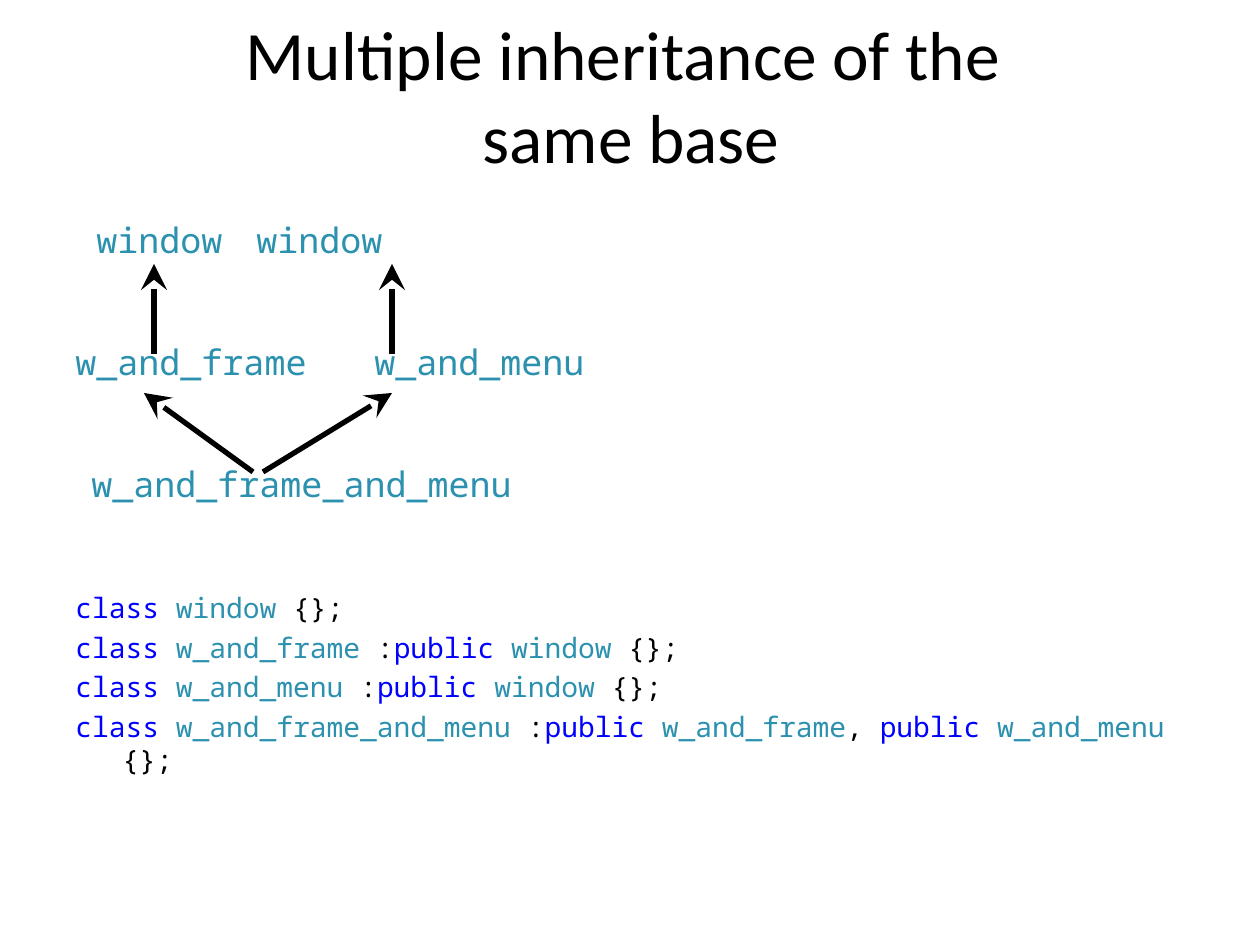
from lxml import etree
from pptx import Presentation
from pptx.dml.color import RGBColor
from pptx.enum.shapes import MSO_CONNECTOR
from pptx.enum.text import MSO_ANCHOR, MSO_AUTO_SIZE, PP_ALIGN
from pptx.oxml.ns import qn
from pptx.util import Emu, Pt

PX = 914400 // 126
BLACK = RGBColor(0, 0, 0)
KEYWORD = RGBColor(0, 0, 255)
TYPE = RGBColor(0x2B, 0x91, 0xAF)
MONO, NARROW = "Noto Sans Mono", "Arial Narrow"
HANGING = 47
TAB = 126


def add_run(paragraph, text, size, font, color):
    run = paragraph.add_run()
    run.text = text
    run.font.size = Pt(size)
    run.font.name = font
    run.font.color.rgb = color


def add_line(text_frame, spacing, before, shift=0):
    """Start a paragraph with a hanging indent, its first line moved by shift px."""
    paragraph = text_frame.paragraphs[0]
    if paragraph.runs:
        paragraph = text_frame.add_paragraph()
    paragraph.line_spacing = spacing
    paragraph.space_before = Pt(before)
    properties = paragraph._p.get_or_add_pPr()
    properties.set("marL", str(HANGING * PX))
    properties.set("indent", str((shift - HANGING) * PX))
    properties.set("defTabSz", str(TAB * PX))
    return paragraph


presentation = Presentation()
presentation.slide_width = Emu(1260 * PX)
presentation.slide_height = Emu(945 * PX)
slide = presentation.slides.add_slide(presentation.slide_layouts[5])

# Title
title = slide.shapes.title
title.left, title.top, title.width, title.height = [Emu(n * PX) for n in (64, 16, 1134, 157)]
title.text_frame.vertical_anchor = MSO_ANCHOR.MIDDLE
title.text_frame.auto_size = MSO_AUTO_SIZE.NONE
paragraph = title.text_frame.paragraphs[0]
paragraph.alignment = PP_ALIGN.CENTER
add_run(paragraph, "Multiple inheritance of the ", 39.6, "Calibri", BLACK)
paragraph.add_line_break()
add_run(paragraph, "same base", 39.6, "Calibri", BLACK)

# Body text: class names of the diagram, then the code
body = slide.shapes.add_textbox(*[Emu(n * PX) for n in (63, 220, 1134, 624)])
text_frame = body.text_frame
text_frame.word_wrap = True

# Diagram rows: space before, first-line shift, pieces
diagram = [
    (4, 0, [(" window", MONO), ("\t ", NARROW), ("window", MONO)]),
    (50.5, 0, [("w_and_frame", MONO), ("\t", NARROW), ("w_and_menu", MONO)]),
    (50.5, 16, [("w_and_frame_and_menu", MONO)]),
]
for before, shift, pieces in diagram:
    paragraph = add_line(text_frame, 0.8, before, shift)
    for text, font in pieces:
        add_run(paragraph, text, 20, font, TYPE if font == MONO else BLACK)

# Code: class name and its bases
classes = [
    ("window", []),
    ("w_and_frame", ["window"]),
    ("w_and_menu", ["window"]),
    ("w_and_frame_and_menu", ["w_and_frame", "w_and_menu"]),
]
for index, (name, bases) in enumerate(classes):
    paragraph = add_line(text_frame, 1.0, 3.4 if index else 49.5)
    tokens = [("class", KEYWORD), (" ", BLACK), (name, TYPE)]
    for position, base in enumerate(bases):
        tokens += [(", " if position else " :", BLACK), ("public", KEYWORD),
                   (" ", BLACK), (base, TYPE)]
    tokens.append((" {};", BLACK))
    for text, color in tokens:
        add_run(paragraph, text, 16, MONO, color)

# Arrows from each class up to its base
arrows = [
    (263, 472, 392, 393),
    (253, 472, 144, 393),
    (392, 354, 392, 264),
    (154, 354, 154, 264),
]
for ends in arrows:
    arrow = slide.shapes.add_connector(MSO_CONNECTOR.STRAIGHT, *[Emu(n * PX) for n in ends])
    arrow.line.color.rgb = BLACK
    arrow.line.width = Pt(3)
    etree.SubElement(arrow.line._get_or_add_ln(), qn("a:tailEnd"),
                     type="stealth", w="lg", len="lg")
    etree.SubElement(arrow._element.spPr, qn("a:effectLst"))

presentation.save("out.pptx")
